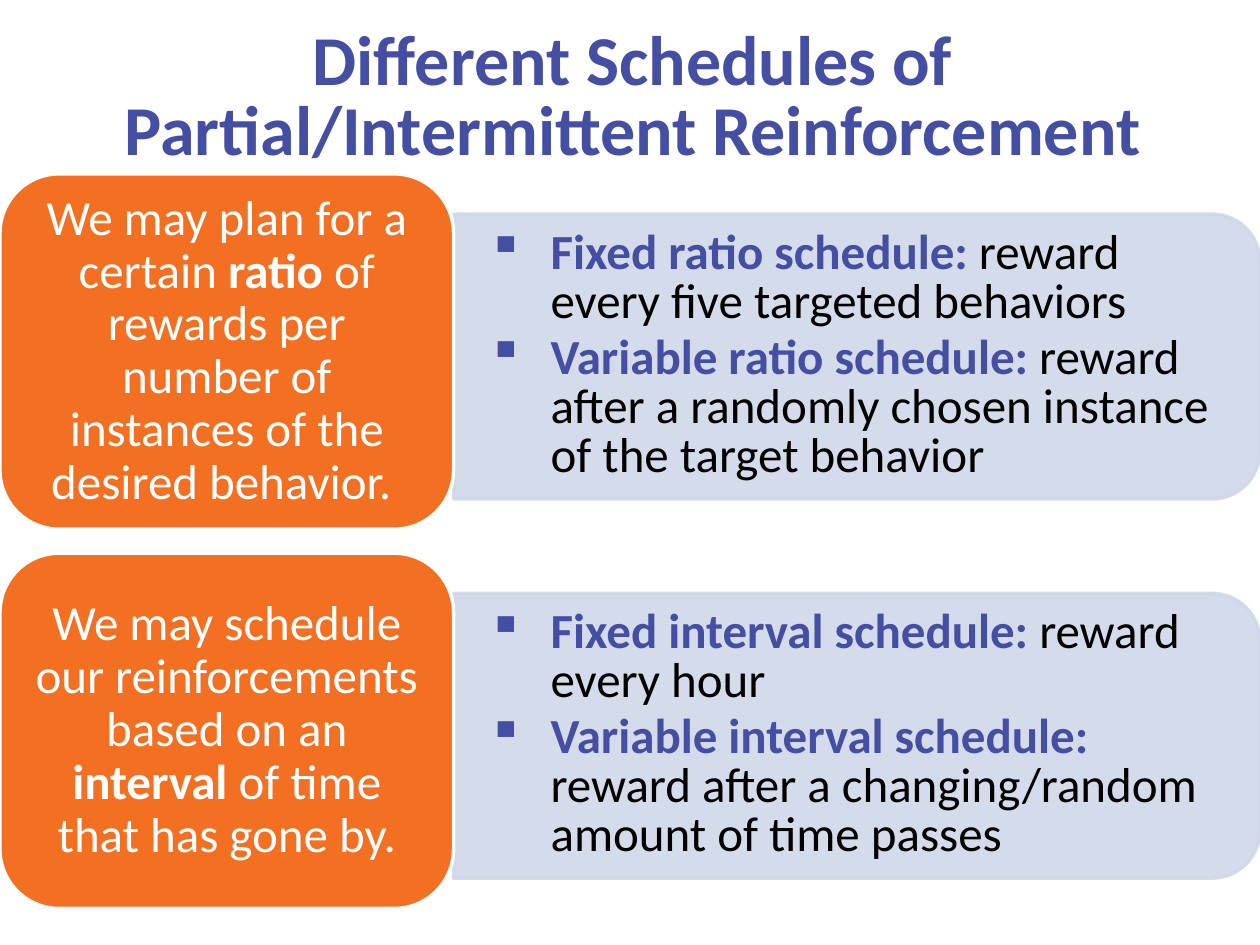
import math

import pptx
import pptx.dml.color
import pptx.enum.shapes
import pptx.enum.text
import pptx.oxml
import pptx.oxml.ns
import pptx.util

COLORS = {"accent": "444EA2", "cause": "F36F21", "panel": "D0D8E8",
          "light": "FFFFFF", "dark": "000000"}
COLUMNS, ROWS = 100, 75
SLIDE_WIDTH, SLIDE_HEIGHT = pptx.util.Inches(10), pptx.util.Inches(7.5)
CAUSE_WIDTH, CAUSE_HEIGHT = 36, 28.2
PANEL_HEIGHT, PANEL_DROP, PANEL_RADIUS = 22.6, 3.2, 3.8
FIRST_ROW, ROW_STEP = 13.8, 30.1
SCHEDULES = [
    ([("We may plan for a certain ", False), ("ratio", True),
      (" of rewards per number of instances of the desired behavior. ", False)],
     [("Fixed ratio schedule: ", "reward every five targeted behaviors"),
      ("Variable ratio schedule: ",
       "reward after a randomly chosen instance of the target behavior")]),
    ([("We may schedule our reinforcements based on an ", False), ("interval", True),
      (" of time that has gone by.", False)],
     [("Fixed interval schedule: ", "reward every hour"),
      ("Variable interval schedule: ",
       "reward after a changing/random amount of time passes")]),
]


def across(columns):
    """Return the length of a number of grid columns."""
    return round(SLIDE_WIDTH * columns / COLUMNS)


def down(rows):
    """Return the length of a number of grid rows."""
    return round(SLIDE_HEIGHT * rows / ROWS)


def rgb(name):
    """Return a named colour."""
    return pptx.dml.color.RGBColor.from_string(COLORS[name])


def add_span(para, text, size=28, color="dark", bold=False):
    """Add one formatted run to a paragraph."""
    span = para.add_run()
    span.text = text
    span.font.name = "Calibri"
    span.font.size = pptx.util.Pt(size)
    span.font.bold = bold
    span.font.color.rgb = rgb(color)


def set_frame(shape, horizontal, vertical, right=None):
    """Wrap and centre the text of a shape inside its margins."""
    frame = shape.text_frame
    frame.word_wrap = True
    frame.vertical_anchor = pptx.enum.text.MSO_ANCHOR.MIDDLE
    frame.margin_left = across(horizontal)
    frame.margin_right = across(horizontal if right is None else right)
    frame.margin_top = frame.margin_bottom = down(vertical)
    return frame


def paint(shape, fill, line, opacity=100):
    """Set the fill and outline of a shape."""
    shape.shadow.inherit = False
    shape.fill.solid()
    shape.fill.fore_color.rgb = rgb(fill)
    shape.line.color.rgb = rgb(line)
    shape.line.width = pptx.util.Pt(2)
    if opacity < 100:
        for color in shape._element.spPr.iter(pptx.oxml.ns.qn("a:srgbClr")):
            alpha = color.makeelement(pptx.oxml.ns.qn("a:alpha"),
                                      {"val": str(opacity * 1000)})
            color.append(alpha)


def add_bullet(para):
    """Give a paragraph a hanging square bullet."""
    indent = pptx.util.Inches(0.5)
    properties = para._p.get_or_add_pPr()
    properties.set("marL", str(indent))
    properties.set("indent", str(-indent))
    bullet = properties.makeelement(pptx.oxml.ns.qn("a:buChar"), {"char": "▪"})
    properties.append(bullet)


def add_panel(page, top, schedules):
    """Add a panel rounded on its right side that lists schedules."""
    bottom, radius = top + PANEL_HEIGHT, PANEL_RADIUS
    center = COLUMNS - radius
    angles = [math.radians(6 * step) for step in range(16)]
    upper = [(across(center + radius * math.sin(angle)),
              down(top + radius - radius * math.cos(angle))) for angle in angles]
    lower = [(across(center + radius * math.cos(angle)),
              down(bottom - radius + radius * math.sin(angle))) for angle in angles]
    builder = page.shapes.build_freeform(across(CAUSE_WIDTH), down(top))
    builder.add_line_segments(upper + lower + [(across(CAUSE_WIDTH), down(bottom))])
    panel = builder.convert_to_shape()
    paint(panel, "panel", "panel", opacity=90)
    frame = set_frame(panel, 2.7, 2.5, right=3.8)
    for index, (name, meaning) in enumerate(schedules):
        para = frame.add_paragraph() if index else frame.paragraphs[0]
        add_bullet(para)
        para.level = 1
        para.alignment = pptx.enum.text.PP_ALIGN.LEFT
        para.line_spacing = pptx.util.Pt(28)
        para.space_after = pptx.util.Pt(4)
        add_span(para, name, color="accent", bold=True)
        add_span(para, meaning)


def add_cause(page, top, spans):
    """Add a rounded box that states the basis of the schedules."""
    box = page.shapes.add_shape(pptx.enum.shapes.MSO_SHAPE.ROUNDED_RECTANGLE,
                                0, down(top), across(CAUSE_WIDTH), down(CAUSE_HEIGHT))
    paint(box, "cause", "light")
    para = set_frame(box, 1.1, 0.6).paragraphs[0]
    para.alignment = pptx.enum.text.PP_ALIGN.CENTER
    para.line_spacing = 0.9
    for text, bold in spans:
        add_span(para, text, color="light", bold=bold)


def add_title(page, text):
    """Add the centred slide title."""
    box = page.shapes.add_textbox(across(5.2), down(-1.5), across(90), down(18.8))
    para = set_frame(box, 1, 0.5).paragraphs[0]
    para.alignment = pptx.enum.text.PP_ALIGN.CENTER
    para.line_spacing = pptx.util.Pt(40)
    add_span(para, text, size=40, color="accent", bold=True)


def main():
    """Build and save the slide."""
    deck = pptx.Presentation()
    deck.slide_width, deck.slide_height = SLIDE_WIDTH, SLIDE_HEIGHT
    page = deck.slides.add_slide(deck.slide_layouts[6])
    for index, (cause, schedules) in reversed(list(enumerate(SCHEDULES))):
        top = FIRST_ROW + index * ROW_STEP
        add_panel(page, top + PANEL_DROP, schedules)
        add_cause(page, top, cause)
    add_title(page, "Different Schedules of Partial/Intermittent Reinforcement")
    deck.save("out.pptx")


if __name__ == "__main__":
    main()
